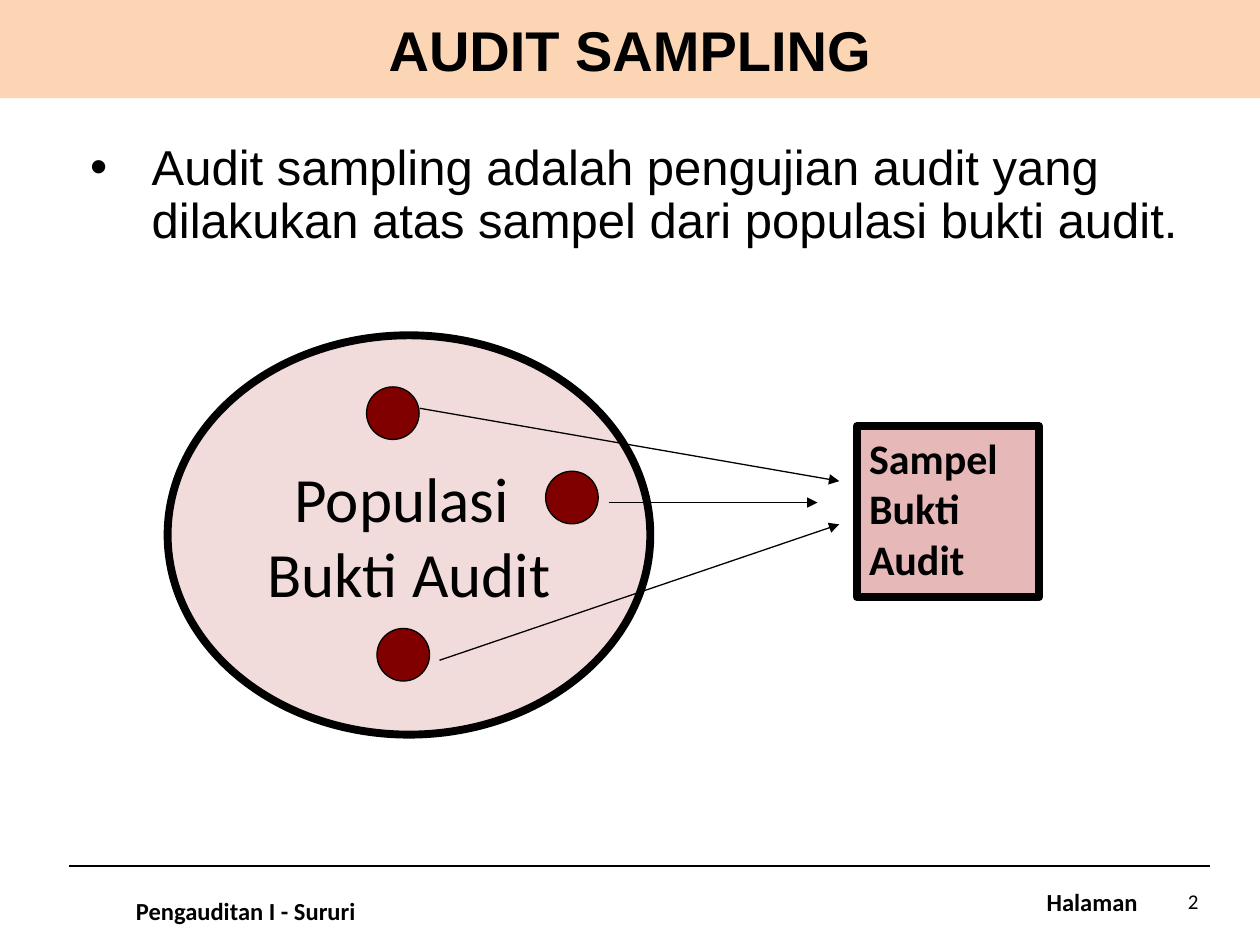
import pptx
import pptx.dml.color
import pptx.enum.shapes
import pptx.enum.text
import pptx.oxml
import pptx.oxml.ns
import pptx.util
from dataclasses import dataclass
from pptx.util import Cm


@dataclass(frozen=True)
class Theme:
    ink: str = "000000"
    banner: str = "FCD5B5"
    population: str = "F2DCDB"
    item: str = "800000"
    sample: str = "E6B9B8"
    heading_font: str = "Arial"
    label_font: str = "Calibri"
    title_size: int = 32
    body_size: int = 28
    population_size: int = 36
    sample_size: int = 24
    footer_size: int = 14
    number_size: int = 12
    thick: float = 4.5
    rule: float = 1.5
    thin: float = 0.75


theme = Theme()
rgb = pptx.dml.color.RGBColor.from_string
shapes_enum = pptx.enum.shapes.MSO_SHAPE
align = pptx.enum.text.PP_ALIGN
anchor = pptx.enum.text.MSO_ANCHOR

deck = pptx.Presentation()
deck.slide_width, deck.slide_height = Cm(25.4), Cm(19.05)
slide = deck.slides.add_slide(deck.slide_layouts[6])


def add_block(place, lines=(), size=12, font=theme.label_font, bold=False, kind=None,
              fill=None, border=None, alignment=align.LEFT, vertical=anchor.TOP, wrap=False):
    """Add a text box, or a filled shape if kind is given; place is in cm."""
    box = [Cm(length) for length in place]
    if kind is None:
        block = slide.shapes.add_textbox(*box)
    else:
        block = slide.shapes.add_shape(kind, *box)
        block.shadow.inherit = False
        block.fill.solid()
        block.fill.fore_color.rgb = rgb(fill)
        if border:
            block.line.color.rgb = rgb(theme.ink)
            block.line.width = pptx.util.Pt(border)
        else:
            block.line.fill.background()
    frame = block.text_frame
    frame.word_wrap = wrap
    frame.vertical_anchor = vertical
    for index, line in enumerate(lines):
        paragraph = frame.paragraphs[0] if index == 0 else frame.add_paragraph()
        paragraph.alignment = alignment
        run = paragraph.add_run()
        run.text = line
        run.font.size = pptx.util.Pt(size)
        run.font.name = font
        run.font.bold = bold
        run.font.color.rgb = rgb(theme.ink)
    return block


def add_line(start, end, width, arrow=False):
    line = slide.shapes.add_connector(pptx.enum.shapes.MSO_CONNECTOR.STRAIGHT,
                                      *[Cm(length) for length in start + end])
    line.line.color.rgb = rgb(theme.ink)
    line.line.width = pptx.util.Pt(width)
    if arrow:
        head = pptx.oxml.parse_xml(f'<a:tailEnd {pptx.oxml.ns.nsdecls("a")} type="triangle"/>')
        line.line._get_or_add_ln().append(head)
    line._element.spPr.append(
        pptx.oxml.parse_xml(f'<a:effectLst {pptx.oxml.ns.nsdecls("a")}/>'))


# Footer
add_block((20.85, 17.75, 2.36, 0.86), ["Halaman"], theme.footer_size, bold=True)
add_line((1.4, 17.46), (24.4, 17.46), theme.rule)
add_block((2.49, 17.93, 5.08, 0.86), ["Pengauditan I - Sururi"], theme.footer_size, bold=True)
add_block((23.22, 17.65, 1.19, 1.02), ["2"], theme.number_size,
          alignment=align.RIGHT, vertical=anchor.MIDDLE, wrap=True)

# Title and definition
add_block((0, 0, 25.4, 1.98), ["AUDIT SAMPLING"], theme.title_size, theme.heading_font, True,
          shapes_enum.RECTANGLE, theme.banner, None, align.CENTER, anchor.MIDDLE, True)

definition = add_block(
    (1.57, 2.77, 22.81, 2.97),
    ["Audit sampling adalah pengujian audit yang dilakukan atas sampel dari populasi bukti audit."],
    theme.body_size, theme.heading_font, wrap=True).text_frame.paragraphs[0]
definition.line_spacing = 0.9
bullet_props = definition._p.get_or_add_pPr()
bullet_props.set("marL", str(Cm(1.24)))
bullet_props.set("indent", str(-Cm(1.24)))
bullet_props.append(pptx.oxml.parse_xml(f'<a:buFont {pptx.oxml.ns.nsdecls("a")} typeface="Arial"/>'))
bullet_props.append(pptx.oxml.parse_xml(f'<a:buChar {pptx.oxml.ns.nsdecls("a")} char="•"/>'))

# Population with the items drawn from it
add_block((3.38, 6.76, 9.73, 8.05), ["Populasi ", "Bukti Audit"], theme.population_size,
          kind=shapes_enum.OVAL, fill=theme.population, border=theme.thick,
          alignment=align.CENTER, vertical=anchor.MIDDLE)

item_size = 1.06
for left, top in [(7.39, 7.8), (11, 9.5), (7.6, 12.67)]:
    add_block((left, top, item_size, item_size), kind=shapes_enum.OVAL,
              fill=theme.item, border=theme.thin)

for start, end in [((8.46, 8.23), (16.92, 9.7)),
                   ((12.27, 10.13), (16.48, 10.13)),
                   ((8.86, 13.31), (16.92, 10.57))]:
    add_line(start, end, theme.thin, arrow=True)

# Sample
add_block((17.27, 8.59, 3.68, 3.45), ["Sampel", "Bukti", "Audit"], theme.sample_size, bold=True,
          kind=shapes_enum.RECTANGLE, fill=theme.sample, border=theme.thick)

deck.save("out.pptx")
